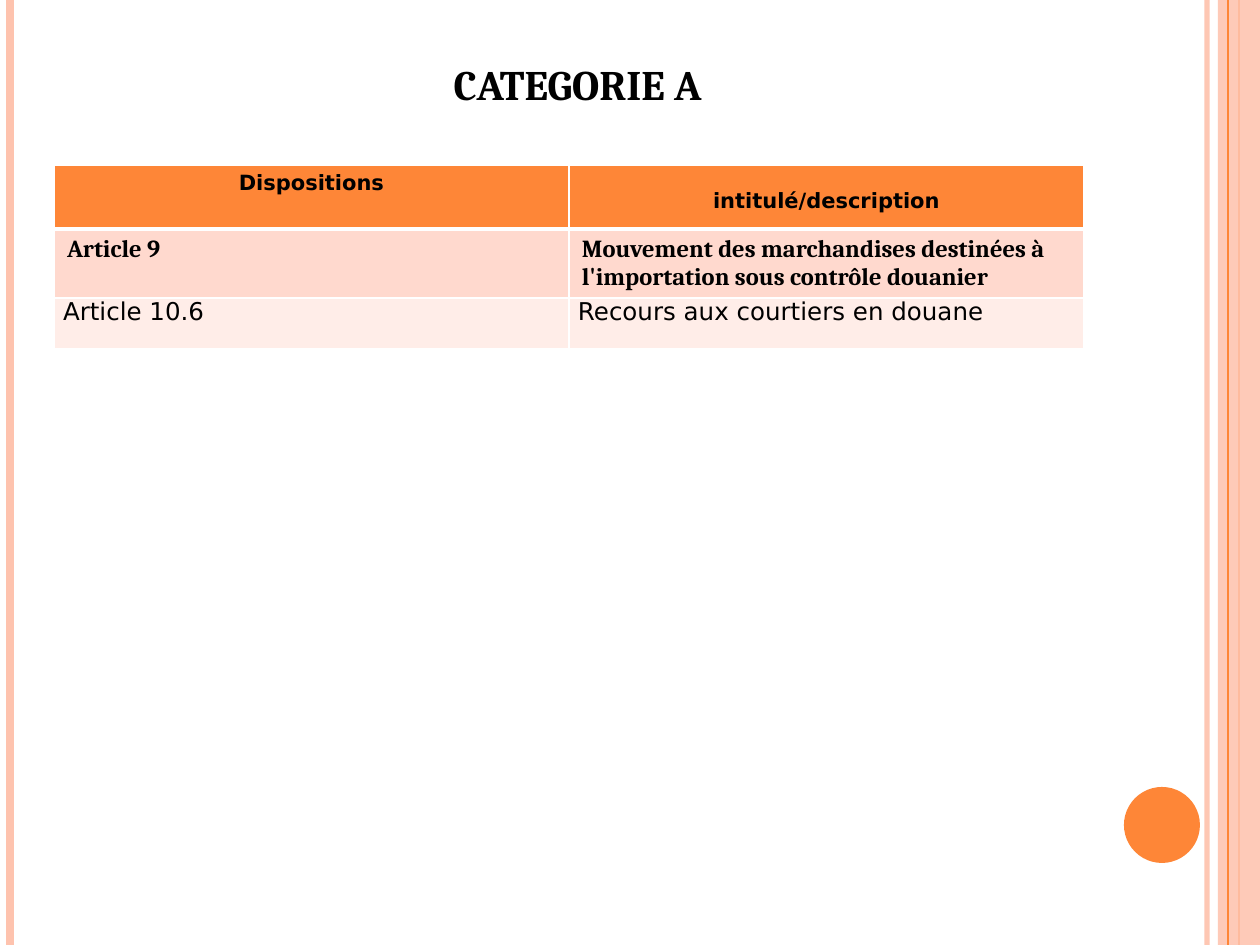
from typing import NamedTuple

from lxml.etree import SubElement
from pptx import Presentation
from pptx.dml.color import RGBColor
from pptx.enum.shapes import MSO_CONNECTOR, MSO_SHAPE
from pptx.enum.text import MSO_ANCHOR, PP_ALIGN
from pptx.oxml.ns import qn
from pptx.util import Pt

PX = 914400 / 126
SLIDE_W, SLIDE_H = 1260, 945

BLACK = RGBColor(0x00, 0x00, 0x00)
WHITE = RGBColor(0xFF, 0xFF, 0xFF)
ORANGE = RGBColor(0xFE, 0x86, 0x37)
PEACH = RGBColor(0xFE, 0xC3, 0xAE)
BAND_DARK = RGBColor(0xFF, 0xD9, 0xCE)
BAND_LIGHT = RGBColor(0xFF, 0xED, 0xE8)

SERIF, SANS = "Cambria", "DejaVu Sans"


class Stripe(NamedTuple):
    x: int
    color: RGBColor
    weight: float
    opacity: int = 100


class Cell(NamedTuple):
    text: str
    margin_x: int = 13
    margin_top: int = 6
    margin_bottom: int = 6


class Row(NamedTuple):
    height: int
    fill: RGBColor
    font: str
    size: int
    bold: bool
    align: PP_ALIGN
    bottom_border: int
    cells: tuple[Cell, ...]


BACK_STRIPES = (
    Stripe(1207, PEACH, 3, 93),
    Stripe(10, PEACH, 4.5),
    Stripe(1239, ORANGE, 1.5),
)
FRONT_STRIPE = Stripe(1228, ORANGE, 0.75)

ROWS = (
    Row(64, ORANGE, SANS, 12, True, PP_ALIGN.CENTER, 3,
        (Cell("Dispositions"), Cell("intitulé/description", 9, 24, 0))),
    Row(69, BAND_DARK, SERIF, 14, True, PP_ALIGN.LEFT, 1,
        (Cell("Article 9"),
         Cell("Mouvement des marchandises destinées à l'importation sous contrôle douanier"))),
    Row(51, BAND_LIGHT, SANS, 14, False, PP_ALIGN.LEFT, 1,
        (Cell("Article 10.6", 9, 0, 0),
         Cell("Recours aux courtiers en douane", 9, 0, 0))),
)


def px(n: int) -> int:
    return round(n * PX)


def set_opacity(props, percent: int) -> None:
    color = next(props.iter(qn("a:srgbClr")))
    SubElement(color, qn("a:alpha"), val=str(percent * 1000))


def add_stripe(shapes, stripe: Stripe) -> None:
    x = px(stripe.x)
    line = shapes.add_connector(MSO_CONNECTOR.STRAIGHT, x, 0, x, px(SLIDE_H))
    line.line.color.rgb = stripe.color
    line.line.width = Pt(stripe.weight)
    props = line._element.spPr
    if stripe.opacity < 100:
        set_opacity(props, stripe.opacity)
    SubElement(props, qn("a:effectLst"))


def add_plain_shape(shapes, kind: MSO_SHAPE, box: tuple[int, ...], color: RGBColor):
    sp = shapes.add_shape(kind, *map(px, box))
    sp.shadow.inherit = False
    sp.fill.solid()
    sp.fill.fore_color.rgb = color
    sp.line.fill.background()
    return sp


def style_paragraph(p, font: str, size: int, bold: bool, align: PP_ALIGN) -> None:
    p.alignment = align
    p.font.name, p.font.size, p.font.bold = font, Pt(size), bold
    p.font.color.rgb = BLACK


def set_borders(cell, top: int, bottom: int) -> None:
    """Give a cell white borders; call before filling, as the schema puts lines first."""
    tc_pr = cell._tc.get_or_add_tcPr()
    for side, weight in (("L", 1), ("R", 1), ("T", top), ("B", bottom)):
        ln = SubElement(tc_pr, qn(f"a:ln{side}"), w=str(Pt(weight)))
        SubElement(SubElement(ln, qn("a:solidFill")), qn("a:srgbClr"), val=str(WHITE))


def add_articles_table(shapes) -> None:
    height = sum(row.height for row in ROWS)
    table = shapes.add_table(len(ROWS), 2, px(54), px(165), px(1030), px(height)).table
    top_border = 1
    for r, row in enumerate(ROWS):
        table.rows[r].height = px(row.height)
        for c, content in enumerate(row.cells):
            cell = table.cell(r, c)
            set_borders(cell, top_border, row.bottom_border)
            cell.fill.solid()
            cell.fill.fore_color.rgb = row.fill
            cell.margin_left = cell.margin_right = px(content.margin_x)
            cell.margin_top = px(content.margin_top)
            cell.margin_bottom = px(content.margin_bottom)
            cell.text = content.text
            style_paragraph(cell.text_frame.paragraphs[0],
                            row.font, row.size, row.bold, row.align)
        top_border = row.bottom_border


def set_title(title) -> None:
    title.left, title.top, title.width, title.height = map(px, (63, 38, 1029, 77))
    tf = title.text_frame
    tf.text = "CATEGORIE A"
    tf.vertical_anchor = MSO_ANCHOR.BOTTOM
    style_paragraph(tf.paragraphs[0], SERIF, 24, True, PP_ALIGN.CENTER)


def main() -> None:
    prs = Presentation()
    prs.slide_width, prs.slide_height = px(SLIDE_W), px(SLIDE_H)
    shapes = prs.slides.add_slide(prs.slide_layouts[5]).shapes

    for stripe in BACK_STRIPES:
        add_stripe(shapes, stripe)
    band = add_plain_shape(shapes, MSO_SHAPE.RECTANGLE, (1218, 0, 42, SLIDE_H), PEACH)
    set_opacity(band._element.spPr, 87)
    add_stripe(shapes, FRONT_STRIPE)
    add_plain_shape(shapes, MSO_SHAPE.OVAL, (1124, 787, 76, 76), ORANGE)

    set_title(shapes.title)
    add_articles_table(shapes)
    prs.save("out.pptx")


if __name__ == "__main__":
    main()
